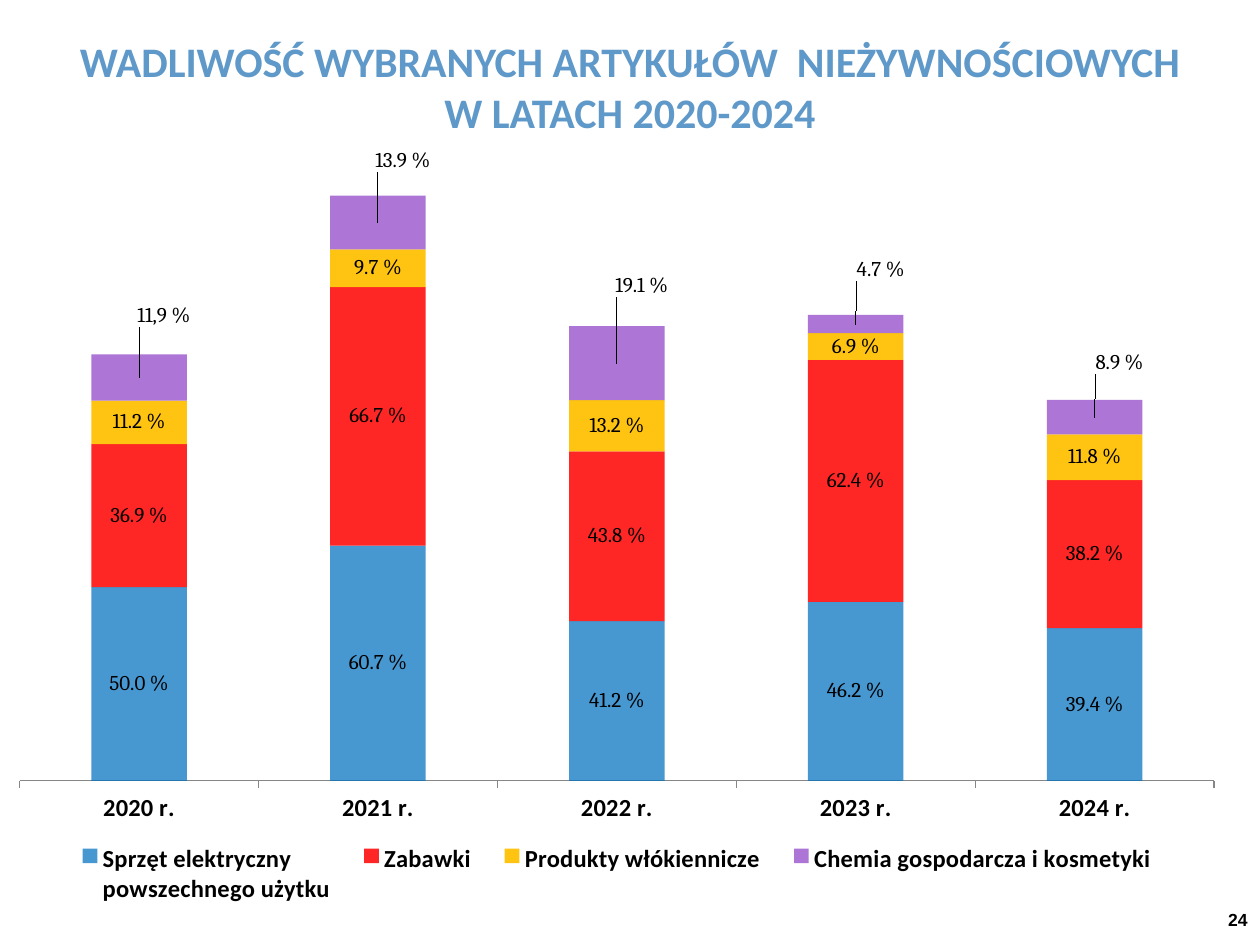
from lxml.etree import SubElement
from pptx import Presentation
from pptx.chart.data import CategoryChartData
from pptx.dml.color import RGBColor
from pptx.enum.chart import XL_CHART_TYPE, XL_LABEL_POSITION, XL_LEGEND_POSITION, XL_TICK_LABEL_POSITION, XL_TICK_MARK
from pptx.enum.text import MSO_ANCHOR, PP_ALIGN
from pptx.oxml import parse_xml
from pptx.oxml.ns import nsdecls, qn
from pptx.util import Pt

TITLE = "WADLIWOŚĆ WYBRANYCH ARTYKUŁÓW  NIEŻYWNOŚCIOWYCH\vW LATACH 2020-2024"
PAGE_NUMBER = "24"
YEARS = ["2020 r.", "2021 r.", "2022 r.", "2023 r.", "2024 r."]
PRODUCTS = [
    ("Sprzęt elektryczny \npowszechnego użytku", [50, 60.7, 41.2, 46.2, 39.4], "0070C0", 72),
    ("Zabawki", [36.9, 66.7, 43.8, 62.4, 38.2], "FF0000", 85),
    ("Produkty włókiennicze", [11.2, 9.7, 13.2, 6.9, 11.8], "FFC000", 93),
    ("Chemia gospodarcza i kosmetyki", [11.9, 13.9, 19.1, 4.7, 8.9], "A568D2", 91),
]
RAISED_LABELS = [
    ("11,9 %", 0.02, -0.08),
    ("13.9 %", 0.02, -0.08),
    ("19.1 %", 0.02, -0.1),
    ("4.7 %", 0.02, -0.07),
    ("8.9 %", 0.02, -0.07),
]


def color(value):
    return RGBColor.from_string(value)


def style(font, size, name, bold=False, fill="000000"):
    font.size = Pt(size)
    font.name = name
    font.bold = bold
    font.color.rgb = color(fill)


def add_text(slide, text, box, align, anchor=MSO_ANCHOR.TOP, wrap=True, **font):
    frame = slide.shapes.add_textbox(*map(Pt, box)).text_frame
    frame.word_wrap = wrap
    frame.vertical_anchor = anchor
    paragraph = frame.paragraphs[0]
    paragraph.text = text
    paragraph.alignment = align
    for run in paragraph.runs:
        style(run.font, **font)


def manual_layout(x, y, w=None, h=None, inner=False):
    parts = [("layoutTarget", "inner")] if inner else []
    if w is not None:
        parts += [("xMode", "edge"), ("yMode", "edge")]
    parts += [("x", x), ("y", y)]
    if w is not None:
        parts += [("w", w), ("h", h)]
    body = "".join(f'<c:{tag} val="{value}"/>' for tag, value in parts)
    return parse_xml(f'<c:layout {nsdecls("c")}><c:manualLayout>{body}</c:manualLayout></c:layout>')


def place(parent, layout, after=None):
    for old in parent.findall(qn("c:layout")):
        parent.remove(old)
    if after is None:
        parent.insert(0, layout)
    else:
        parent.find(qn(after)).addnext(layout)


def add_defect_chart(slide):
    rates = CategoryChartData(number_format="0.0")
    rates.categories = YEARS
    for name, values, _, _ in PRODUCTS:
        rates.add_series(name, values)
    chart = slide.shapes.add_chart(
        XL_CHART_TYPE.COLUMN_STACKED, Pt(-3), Pt(83), Pt(711), Pt(443), rates).chart
    style(chart.font, 10, "Calibri")
    chart.has_title = False

    years = chart.category_axis
    years.major_tick_mark = XL_TICK_MARK.OUTSIDE
    years.tick_label_position = XL_TICK_LABEL_POSITION.LOW
    years.format.line.color.rgb = color("868686")
    style(years.tick_labels.font, 14, "Calibri", bold=True)
    percent = chart.value_axis
    percent.visible = False
    percent.has_major_gridlines = False
    percent.minimum_scale = 0
    percent.maximum_scale = 160

    chart.has_legend = True
    legend = chart.legend
    legend.position = XL_LEGEND_POSITION.BOTTOM
    legend.include_in_layout = False
    style(legend.font, 14, "Calibri", bold=True)
    place(legend._element, manual_layout(0.05, 0.89, 0.9, 0.1), "c:legendPos")
    plot = chart.plots[0]
    plot.gap_width = 150
    plot.overlap = 100
    plot.vary_by_categories = False
    place(chart._chartSpace.chart.plotArea, manual_layout(0.02, 0.02, 0.96, 0.8, inner=True))

    for series, (_, _, fill, opacity) in zip(plot.series, PRODUCTS):
        series.format.fill.solid()
        series.format.fill.fore_color.rgb = color(fill)
        shade = series._element.find(".//" + qn("a:srgbClr"))
        SubElement(shade, qn("a:alpha")).set("val", str(opacity * 1000))
        series.format.line.fill.background()
        labels = series.data_labels
        labels.show_value = True
        labels.number_format = '0.0" %"'
        labels.number_format_is_linked = False
        labels.position = XL_LABEL_POSITION.CENTER
        style(labels.font, 12, "Cambria")

    chemistry = plot.series[len(PRODUCTS) - 1]
    for index, (text, dx, dy) in enumerate(RAISED_LABELS):
        label = chemistry.points[index].data_label
        run = label.text_frame.paragraphs[0].add_run()
        run.text = text
        style(run.font, 12, "Cambria")
        label.position = XL_LABEL_POSITION.CENTER
        element = chemistry.data_labels._element.findall(qn("c:dLbl"))[index]
        place(element, manual_layout(dx, dy), "c:idx")


def main():
    deck = Presentation()
    deck.slide_width, deck.slide_height = Pt(720), Pt(540)
    slide = deck.slides.add_slide(deck.slide_layouts[6])
    add_text(slide, TITLE, (20, 17, 680, 66), PP_ALIGN.CENTER,
             size=24, name="Calibri", bold=True, fill="5F99C9")
    add_text(slide, PAGE_NUMBER, (688, 511, 32, 29), PP_ALIGN.RIGHT, MSO_ANCHOR.MIDDLE,
             wrap=False, size=10, name="Arial", bold=True)
    add_defect_chart(slide)
    deck.save("out.pptx")


if __name__ == "__main__":
    main()
